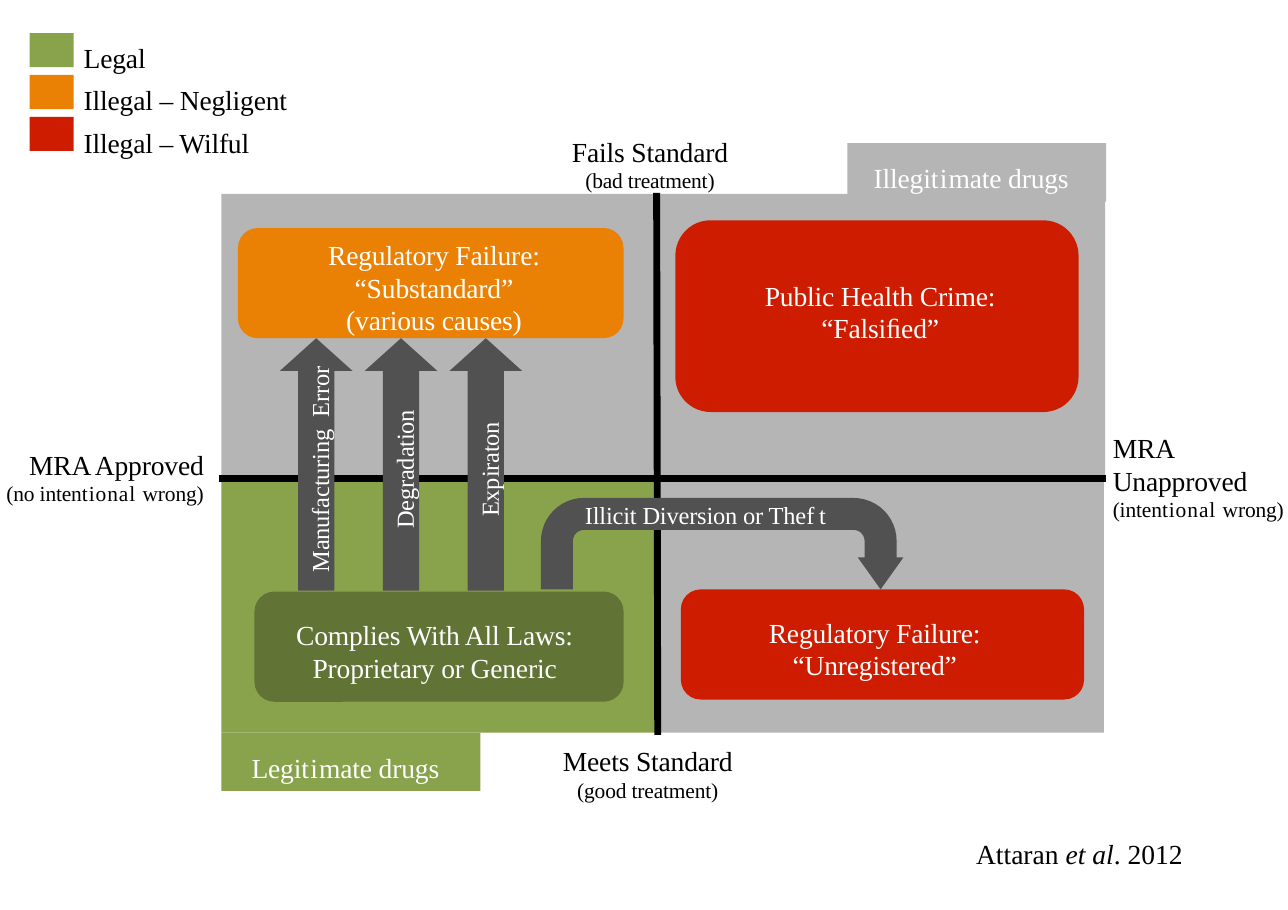
from dataclasses import dataclass

from lxml.etree import SubElement
from pptx import Presentation
from pptx.dml.color import RGBColor
from pptx.enum.shapes import MSO_CONNECTOR, MSO_SHAPE
from pptx.enum.text import MSO_ANCHOR, PP_ALIGN
from pptx.oxml.ns import qn
from pptx.shapes.autoshape import Shape
from pptx.slide import Slide
from pptx.text.text import TextFrame
from pptx.util import Inches, Pt

COLORS = {
    "legal": "89A24C",
    "compliant": "617335",
    "negligent": "EB8104",
    "wilful": "CE1C00",
    "illegitimate": "B5B5B5",
    "arrow": "515151",
    "black": "000000",
    "white": "FFFFFF",
}
FONT = "Times New Roman"
LINE_FACTOR = 1.18


@dataclass(frozen=True)
class Span:
    text: str
    spacing: float = -0.1
    italic: bool = False


@dataclass(frozen=True)
class Line:
    spans: tuple[Span, ...]
    size: int = 18
    height: float = 0


@dataclass(frozen=True)
class Block:
    """A filled area; nudge moves its text away from the centre."""
    left: float
    top: float
    width: float
    height: float
    color: str
    lines: tuple[Line, ...] = ()
    nudge: tuple[float, float] = (0, 0)
    radius: float = 0


@dataclass(frozen=True)
class Label:
    left: float
    top: float
    width: float
    height: float
    lines: tuple[Line, ...]
    align: PP_ALIGN = PP_ALIGN.LEFT
    color: str = "black"
    vertical: bool = False


def line(*parts: str | Span, size: int = 18, height: float = 0) -> Line:
    spans = tuple(Span(part) if isinstance(part, str) else part for part in parts)
    return Line(spans, size, height)


def write(frame: TextFrame, lines: tuple[Line, ...], color: str, align: PP_ALIGN) -> None:
    frame.word_wrap = True
    for index, entry in enumerate(lines):
        para = frame.paragraphs[0] if index == 0 else frame.add_paragraph()
        para.alignment = align
        para.line_spacing = Pt(entry.height or entry.size * LINE_FACTOR)
        para.font.name = FONT
        para.font.size = Pt(entry.size)
        para.font.color.rgb = RGBColor.from_string(COLORS[color])
        for span in entry.spans:
            run = para.add_run()
            run.text = span.text
            if span.italic:
                run.font.italic = True
            run._r.get_or_add_rPr().set("spc", str(round(span.spacing * 100)))


def set_margins(frame: TextFrame, horizontal: float, vertical: float,
                nudge: tuple[float, float] = (0, 0)) -> None:
    frame.margin_left = Inches(horizontal + nudge[0])
    frame.margin_right = Inches(horizontal - nudge[0])
    frame.margin_top = Inches(vertical + nudge[1])
    frame.margin_bottom = Inches(vertical - nudge[1])


def add_filled(page: Slide, kind: MSO_SHAPE, left: float, top: float,
               width: float, height: float, color: str) -> Shape:
    shape = page.shapes.add_shape(kind, Inches(left), Inches(top), Inches(width), Inches(height))
    shape.shadow.inherit = False
    shape.fill.solid()
    shape.fill.fore_color.rgb = RGBColor.from_string(COLORS[color])
    shape.line.fill.background()
    return shape


def add_block(page: Slide, block: Block) -> None:
    kind = MSO_SHAPE.ROUNDED_RECTANGLE if block.radius else MSO_SHAPE.RECTANGLE
    shape = add_filled(page, kind, block.left, block.top, block.width, block.height, block.color)
    if block.radius:
        shape.adjustments[0] = block.radius / block.height
    if block.lines:
        shape.text_frame.vertical_anchor = MSO_ANCHOR.MIDDLE
        set_margins(shape.text_frame, 0.1, 0.05, block.nudge)
        write(shape.text_frame, block.lines, "white", PP_ALIGN.CENTER)


def add_label(page: Slide, label: Label) -> None:
    box = page.shapes.add_textbox(Inches(label.left), Inches(label.top),
                                  Inches(label.width), Inches(label.height))
    set_margins(box.text_frame, 0, 0)
    if label.vertical:
        box.text_frame._txBody.bodyPr.set("vert", "vert270")
    write(box.text_frame, label.lines, label.color, label.align)


def add_axis(page: Slide, x1: float, y1: float, x2: float, y2: float) -> None:
    axis = page.shapes.add_connector(MSO_CONNECTOR.STRAIGHT, Inches(x1), Inches(y1),
                                     Inches(x2), Inches(y2))
    axis.line.width = Pt(4.5)
    axis.line.color.rgb = RGBColor.from_string(COLORS["black"])
    SubElement(axis._element.spPr, qn("a:effectLst"))


def add_cause(page: Slide, left: float, cause: Line) -> None:
    arrow = add_filled(page, MSO_SHAPE.UP_ARROW, left, 3.07, 0.66, 2.29, "arrow")
    arrow.adjustments[0] = 0.5
    arrow.adjustments[1] = 0.45
    add_label(page, Label(left + 0.23, 3.26, 0.27, 2, (cause,), PP_ALIGN.CENTER, "white", True))


def add_diversion(page: Slide) -> None:
    arrow = add_filled(page, MSO_SHAPE.U_TURN_ARROW, 4.91, 4.52, 3.29, 0.83, "arrow")
    for index, value in enumerate((0.35, 0.27, 0.35, 0.47, 1)):
        arrow.adjustments[index] = value
    words = line("Illicit Diversion or The", Span("ft", 3), size=16)
    add_label(page, Label(5.31, 4.54, 2.4, 0.27, (words,), color="white"))


QUADRANTS = (
    Block(2.01, 4.37, 3.98, 2.28, "legal"),
    Block(5.99, 4.37, 4.03, 2.28, "illegitimate"),
    Block(2.01, 1.76, 8.02, 2.55, "illegitimate"),
)
TABS = (
    Block(7.69, 1.3, 2.35, 0.53, "illegitimate",
          (line("Illegi", Span("ti", 0.8), "mate drugs"),), (-0.05, 0.05)),
    Block(2.01, 6.65, 2.35, 0.53, "legal",
          (line("Legi", Span("ti", 0.8), "mate drugs"),), (-0.05, 0.05)),
)
OUTCOMES = (
    Block(2.16, 2.07, 3.5, 1, "negligent",
          (line("Regulatory Failure:"), line("“Substandard”"), line("(various causes)")),
          (0.03, 0.04), 0.18),
    Block(6.13, 2, 3.66, 1.74, "wilful",
          (line("Public Health Crime:"), line("“Falsiﬁed”")), (0.03, -0.04), 0.32),
    Block(6.18, 5.35, 3.66, 1, "wilful",
          (line("Regulatory Failure:"), line("“Unregistered”")), (-0.07, 0.04), 0.18),
    Block(2.31, 5.37, 3.35, 1, "compliant",
          (line("Complies With All Laws:"), line("Proprietary or Generic")), (-0.04, 0.04), 0.18),
)
CAUSES = (
    line("Manufacturing", Span(" ", 4), "Error", size=16),
    line("Degradation", size=16),
    line("Expiraton", size=16),
)
LABELS = (
    Label(5.1, 1.23, 1.6, 0.53, (line("Fails Standard"), line("(bad treatment)", size=14)),
          PP_ALIGN.CENTER),
    Label(5.08, 6.76, 1.6, 0.54, (line("Meets Standard"), line("(good treatment)", size=14, height=17)),
          PP_ALIGN.CENTER),
    Label(0, 4.07, 1.85, 0.53,
          (line("MRA Approved"), line("(no inten", Span("tional ", 0.6), "wrong)", size=14)),
          PP_ALIGN.RIGHT),
    Label(10.1, 3.92, 1.59, 0.82,
          (line("MRA"), line("Unapproved"), line("(inten", Span("tional ", 0.6), "wrong)", size=14))),
    Label(0.76, 0.28, 2.1, 1.17,
          tuple(line(text, height=28) for text in ("Legal", "Illegal – Negligent", "Illegal – Wilful"))),
    Label(8.86, 7.6, 2.1, 0.3,
          (line(Span("Attaran ", 0), Span("et al", 0, True), Span(". 2012", 0)),)),
)


def main() -> None:
    deck = Presentation()
    deck.slide_width, deck.slide_height = Inches(11.69), Inches(8.26)
    page = deck.slides.add_slide(deck.slide_layouts[6])
    for quadrant in QUADRANTS:
        add_block(page, quadrant)
    add_axis(page, 5.96, 1.75, 5.97, 6.67)
    add_axis(page, 1.99, 4.34, 10.04, 4.34)
    for block in TABS + OUTCOMES:
        add_block(page, block)
    for index, cause in enumerate(CAUSES):
        add_cause(page, 2.54 + 0.77 * index, cause)
    add_diversion(page)
    for index, color in enumerate(("legal", "negligent", "wilful")):
        add_block(page, Block(0.27, 0.3 + 0.38 * index, 0.4, 0.31, color))
    for label in LABELS:
        add_label(page, label)
    deck.save("out.pptx")


if __name__ == "__main__":
    main()
